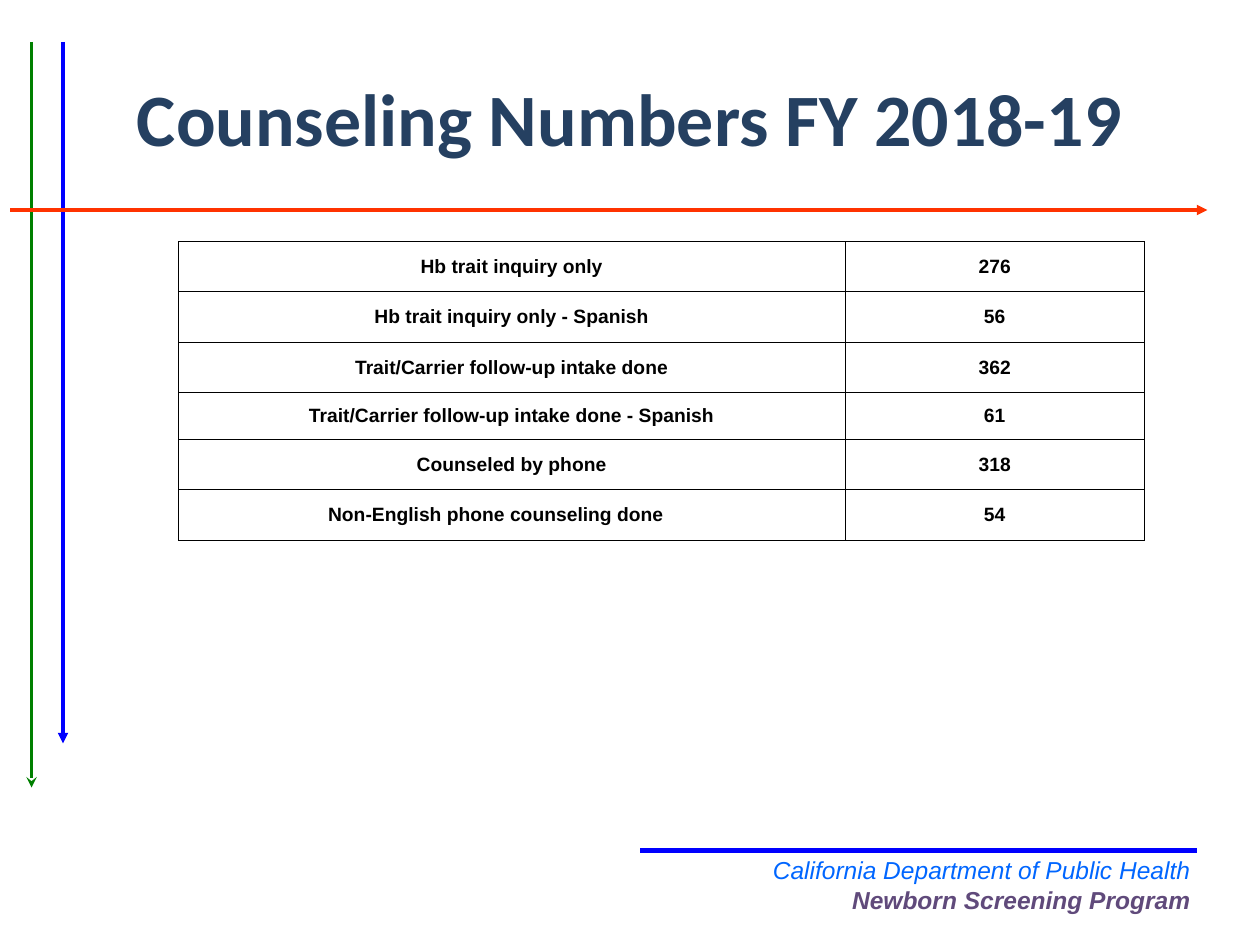
import pptx
import pptx.dml.color
import pptx.enum.shapes
import pptx.enum.text
import pptx.oxml
import pptx.oxml.ns
import pptx.util

COLORS = {
    "green": "008000", "blue": "0000FF", "red": "FF3300", "navy": "254061",
    "sky": "0066FF", "purple": "604A7B", "black": "000000",
}
WIDTH, HEIGHT = pptx.util.Inches(10), pptx.util.Inches(7.5)
COLUMNS = 120  # square grid units across the slide
INSET = pptx.util.Inches(0.05)
CELL_INSET = pptx.util.Inches(0.01)
ALIGN = pptx.enum.text.PP_ALIGN
ANCHOR = pptx.enum.text.MSO_ANCHOR

COUNTS = [
    ("Hb trait inquiry only", 276),
    ("Hb trait inquiry only - Spanish", 56),
    ("Trait/Carrier follow-up intake done", 362),
    ("Trait/Carrier follow-up intake done - Spanish", 61),
    ("Counseled by phone", 318),
    ("Non-English phone counseling done", 54),
]


def grid(units):
    return round(units * WIDTH / COLUMNS)


def rgb(name):
    return pptx.dml.color.RGBColor.from_string(COLORS[name])


def add_element(parent, tag, **attributes):
    child = pptx.oxml.parse_xml(f"<a:{tag} {pptx.oxml.ns.nsdecls('a')}/>")
    for key, value in attributes.items():
        child.set(key, str(value))
    parent.append(child)
    return child


def add_text(p, text, size=14, font="Arial", color="black", bold=False,
             italic=False, align=ALIGN.CENTER):
    p.alignment = align
    r = p.add_run()
    r.text = text
    r.font.size = pptx.util.Pt(size)
    r.font.name = font
    r.font.bold = bold
    r.font.italic = italic
    r.font.color.rgb = rgb(color)


def add_text_box(s, box):
    """Return the first paragraph of a wrapping text box."""
    tf = s.shapes.add_textbox(*map(grid, box)).text_frame
    tf.word_wrap = True
    tf.margin_left = tf.margin_right = tf.margin_top = tf.margin_bottom = INSET
    tf.vertical_anchor = ANCHOR.MIDDLE
    return tf.paragraphs[0]


def add_line(s, start, end, color, width=2, head=None):
    line = s.shapes.add_connector(
        pptx.enum.shapes.MSO_CONNECTOR.STRAIGHT, *map(grid, start + end))
    line.line.color.rgb = rgb(color)
    line.line.width = pptx.util.Pt(width)
    if head:
        add_element(line.line._get_or_add_ln(), "tailEnd", type=head)
    add_element(line._element.spPr, "effectLst")


def add_frame(s, box):
    """Draw the two down arrows and the arrow under the title."""
    left, top, width, height = box
    add_line(s, (left + 2, top), (left + 2, top + height), "green", head="stealth")
    add_line(s, (left + 5, top), (left + 5, top + height - 4.2), "blue", head="triangle")
    add_line(s, (left, top + 16), (left + width, top + 16), "red", head="triangle")


def add_footer(s, box):
    left, top, width, _ = box
    add_line(s, (left, top), (left + width, top), "blue", width=3)
    p = add_text_box(s, box)
    add_text(p, "California Department of Public Health", color="sky",
             italic=True, align=ALIGN.RIGHT)
    p.add_line_break()
    add_text(p, "Newborn Screening Program", color="purple", bold=True,
             italic=True, align=ALIGN.RIGHT)


def add_title(s, box):
    add_text(add_text_box(s, box), "Counseling Numbers FY 2018-19",
             size=42.2, font="Calibri", color="navy", bold=True)


def add_borders(cell):
    """Outline a cell; border elements come before its fill."""
    tc_pr = cell._tc.get_or_add_tcPr()
    for side in ("lnL", "lnR", "lnT", "lnB"):
        ln = add_element(tc_pr, side, w=pptx.util.Pt(0.5))
        fill = add_element(ln, "solidFill")
        add_element(fill, "srgbClr", val=COLORS["black"])


def add_counts_table(s, box):
    table = s.shapes.add_table(len(COUNTS), 2, *map(grid, box)).table
    table.first_row = table.horz_banding = False
    for column, share in zip(table.columns, (0.69, 0.31)):
        column.width = round(grid(box[2]) * share)
    for i, values in enumerate(COUNTS):
        table.rows[i].height = pptx.util.Inches(0.37 if i == 3 else 0.4)
        for j, value in enumerate(values):
            cell = table.cell(i, j)
            cell.margin_left = cell.margin_right = CELL_INSET
            cell.margin_top = cell.margin_bottom = CELL_INSET
            cell.vertical_anchor = ANCHOR.MIDDLE
            add_borders(cell)
            cell.fill.background()
            add_text(cell.text_frame.paragraphs[0], str(value), size=11, bold=True)
    # The last label sits a little left of centre.
    table.cell(len(COUNTS) - 1, 0).margin_right = pptx.util.Inches(0.26)


def main():
    prs = pptx.Presentation()
    prs.slide_width, prs.slide_height = WIDTH, HEIGHT
    s = prs.slides.add_slide(prs.slide_layouts[6])
    add_frame(s, (1, 4, 114, 71))
    add_footer(s, (61, 81, 53, 6.5))
    add_title(s, (6, 3.6, 108, 15))
    add_counts_table(s, (17, 23, 92, 28.2))
    prs.save("out.pptx")


if __name__ == "__main__":
    main()
